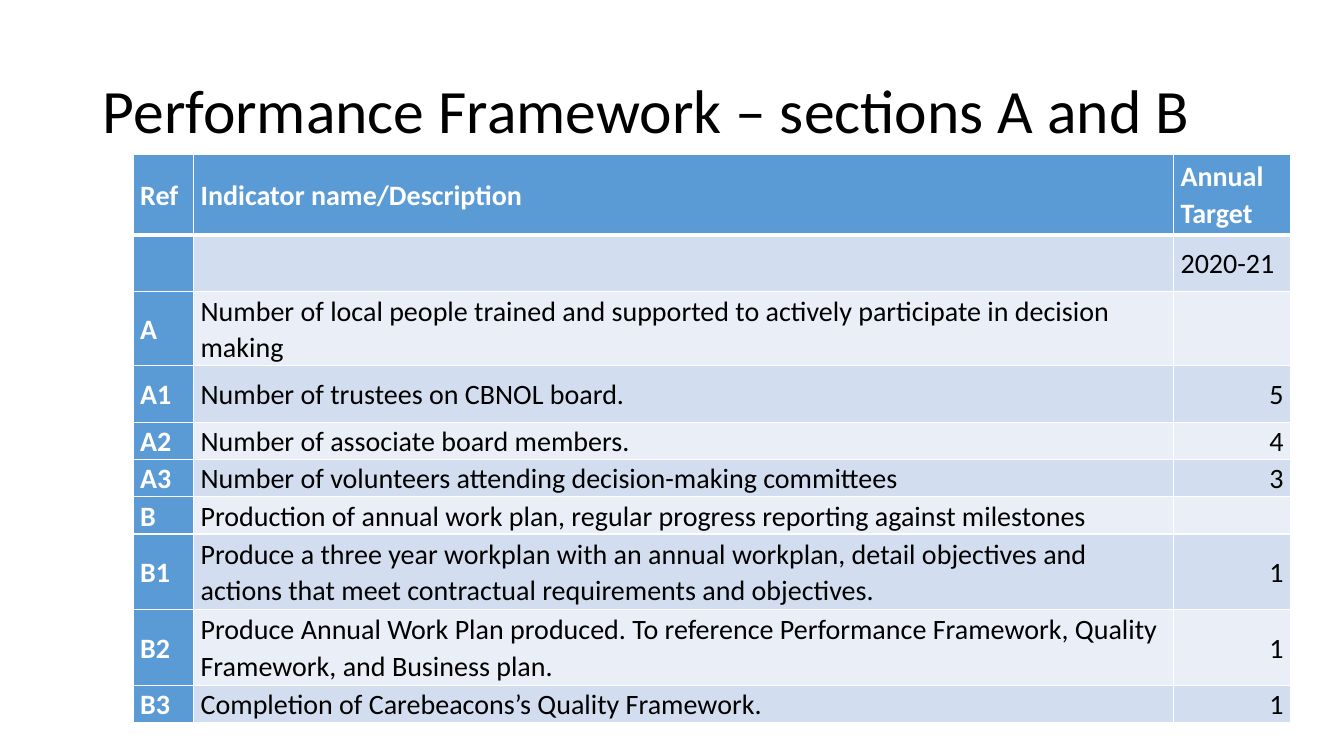
from dataclasses import dataclass

from lxml.etree import SubElement
from pptx import Presentation
from pptx.dml.color import RGBColor
from pptx.enum.text import MSO_ANCHOR as Anchor, MSO_AUTO_SIZE as AutoSize, PP_ALIGN as Align
from pptx.oxml.ns import qn
from pptx.util import Emu, Pt

COLORS = {
    "header": "5B9BD5",
    "band_dark": "D2DEEF",
    "band_light": "EAEFF7",
    "white": "FFFFFF",
    "black": "000000",
}
FONT = "Calibri"
COLUMN_WIDTHS = (60, 972, 116)
HEADER_HEIGHT = 80


@dataclass(frozen=True)
class Indicator:
    ref: str
    description: str
    target: str
    height: int


HEADINGS = ("Ref", "Indicator name/Description", "Annual Target")
INDICATORS = (
    Indicator("", "", "2020-21", 56),
    Indicator("A", "Number of local people trained and supported to actively "
              "participate in decision making", "", 74),
    Indicator("A1", "Number of trustees on CBNOL board.", "5", 56),
    Indicator("A2", "Number of associate board members.", "4", 37),
    Indicator("A3", "Number of volunteers attending decision-making committees", "3", 37),
    Indicator("B", "Production of annual work plan, regular progress reporting "
              "against milestones", "", 37),
    Indicator("B1", "Produce a three year workplan with an annual workplan, detail objectives "
              "and actions that meet contractual requirements and objectives.", "1", 75),
    Indicator("B2", "Produce Annual Work Plan produced. To reference Performance Framework, "
              "Quality Framework, and Business plan.", "1", 75),
    Indicator("B3", "Completion of Carebeacons’s Quality Framework.", "1", 37),
)


def px(length: int) -> Emu:
    """One px is a hundredth of an inch."""
    return Emu(length * 9144)


def rgb(name: str) -> RGBColor:
    return RGBColor.from_string(COLORS[name])


def write(frame, text: str, *, size: int = 20, color: str = "black", bold: bool = False,
          align: Align = Align.LEFT, spacing: float = 1.07) -> None:
    paragraph = frame.paragraphs[0]
    paragraph.alignment = align
    paragraph.line_spacing = spacing
    run = paragraph.add_run()
    run.text = text
    run.font.name = FONT
    run.font.size = Pt(size)
    run.font.bold = bold
    run.font.color.rgb = rgb(color)


def add_borders(cell, top: int = 1, bottom: int = 1) -> None:
    properties = cell._tc.get_or_add_tcPr()
    for side, width in (("L", 1), ("R", 1), ("T", top), ("B", bottom)):
        line = SubElement(properties, qn(f"a:ln{side}"), w=str(Pt(width)))
        fill = SubElement(line, qn("a:solidFill"))
        SubElement(fill, qn("a:srgbClr"), val=COLORS["white"])


def fill_cell(cell, text: str, row: int, column: int) -> None:
    is_heading = row == 0 or column == 0
    band = "band_dark" if row % 2 else "band_light"
    add_borders(cell, top=3 if row == 1 else 1, bottom=3 if row == 0 else 1)
    cell.fill.solid()
    cell.fill.fore_color.rgb = rgb("header" if is_heading else band)
    cell.vertical_anchor = Anchor.MIDDLE
    cell.margin_left = cell.margin_right = px(7)
    cell.margin_top = cell.margin_bottom = 0
    if text:
        write(cell.text_frame, text, bold=is_heading,
              color="white" if is_heading else "black",
              align=Align.RIGHT if text.isdigit() else Align.LEFT)


def add_title(slide, text: str) -> None:
    title = slide.shapes.title
    title.left, title.top, title.width, title.height = map(px, (92, 40, 1150, 145))
    frame = title.text_frame
    frame.auto_size = AutoSize.NONE
    frame.vertical_anchor = Anchor.MIDDLE
    write(frame, text, size=44, spacing=0.9)


def add_framework(slide) -> None:
    heights = (HEADER_HEIGHT, *(item.height for item in INDICATORS))
    rows = (HEADINGS, *((item.ref, item.description, item.target) for item in INDICATORS))
    framework = slide.shapes.add_table(
        len(rows), len(HEADINGS), px(132), px(153), px(sum(COLUMN_WIDTHS)), px(sum(heights))
    ).table
    for column, width in zip(framework.columns, COLUMN_WIDTHS):
        column.width = px(width)
    for row_index, (height, texts) in enumerate(zip(heights, rows)):
        framework.rows[row_index].height = px(height)
        for column_index, text in enumerate(texts):
            fill_cell(framework.cell(row_index, column_index), text, row_index, column_index)


def main() -> None:
    deck = Presentation()
    deck.slide_width, deck.slide_height = px(1333), px(750)
    slide = deck.slides.add_slide(deck.slide_layouts[5])
    # Title
    add_title(slide, "Performance Framework – sections A and B")
    # Indicators with their annual targets
    add_framework(slide)
    deck.save("out.pptx")


if __name__ == "__main__":
    main()
